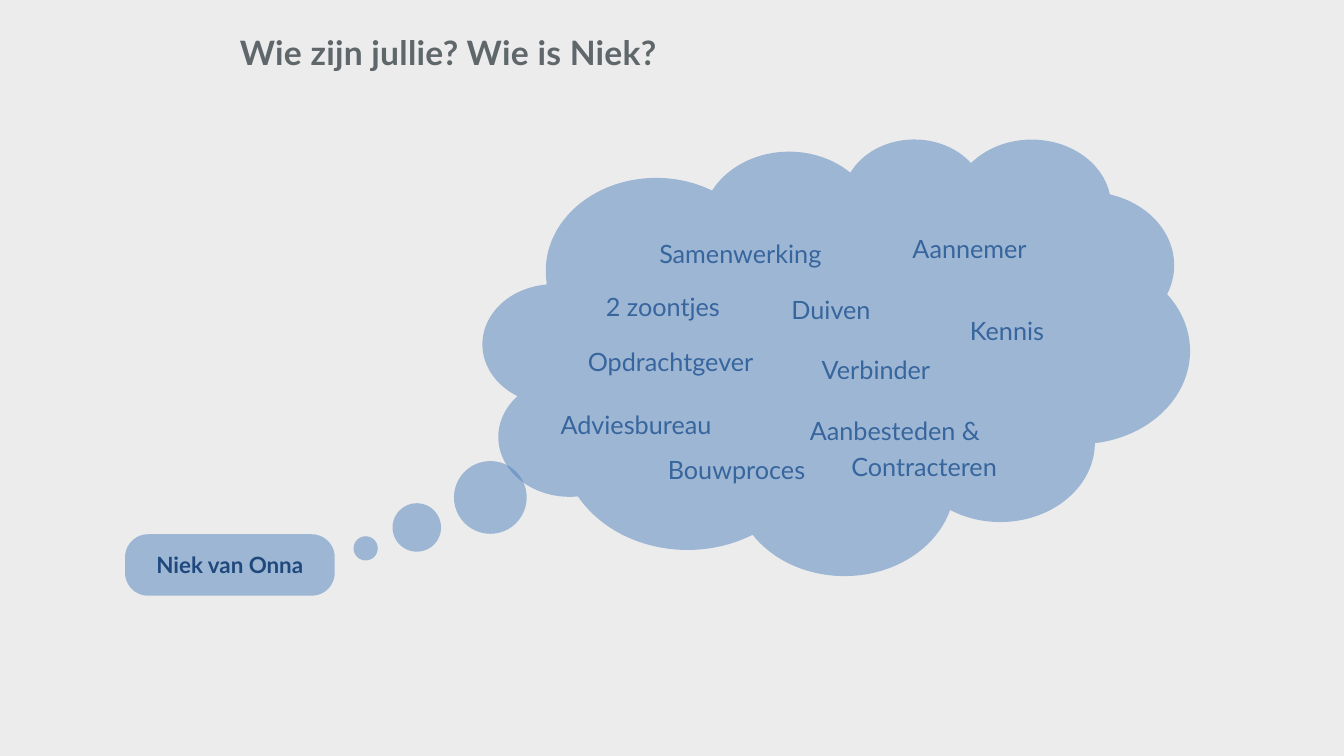
from pptx import Presentation
from pptx.dml.color import RGBColor
from pptx.enum.shapes import MSO_SHAPE
from pptx.enum.text import MSO_ANCHOR, PP_ALIGN
from pptx.oxml.ns import qn
from pptx.util import Inches, Pt
from lxml.etree import SubElement

FONT = "Lato"
BACKGROUND = RGBColor(0xEC, 0xEC, 0xEC)
GREY = RGBColor(0x5F, 0x67, 0x6A)
NAVY = RGBColor(0x1F, 0x49, 0x7D)
BLUE = RGBColor(0x4F, 0x81, 0xBD)
LEFT, CENTER = PP_ALIGN.LEFT, PP_ALIGN.CENTER

# Content: text and its place as left, top, width, height
TITLE = ("Wie zijn jullie? Wie is Niek?", (2.28, 0.27, 9.98, 0.61))
NAME = ("Niek van Onna", (1.24, 5.3, 2.08, 0.61))
CLOUD = (4.79, 1.37, 7.01, 4.33)
CLOUD_TAIL = (-0.666, 0.44)
FIRST_WORD = ("Samenwerking", (6.44, 2.32, 1.99, 0.43))

# Hanging words: text, place, alignment, line spacing
WORDS = [
    ("Duiven", (7.65, 2.85, 1.99, 0.43), LEFT, 0.9),
    ("Kennis", (9.42, 2.97, 1.56, 0.43), LEFT, 1.2),
    ("Opdrachtgever", (5.63, 3.37, 2.14, 0.43), LEFT, 0.9),
    ("Aannemer", (8.85, 2.25, 1.99, 0.43), LEFT, 0.9),
    ("Adviesbureau", (5.36, 3.99, 1.99, 0.43), LEFT, 0.9),
    ("Verbinder", (7.95, 3.45, 1.99, 0.43), LEFT, 0.9),
    ("Aanbesteden & Contracteren", (7.55, 3.96, 2.65, 1.32), CENTER, 1.2),
    ("Bouwproces", (6.31, 4.44, 1.99, 0.43), CENTER, 0.9),
    ("2 zoontjes", (5.58, 2.82, 1.99, 0.43), CENTER, 0.9),
]
HANGING = Inches(0.58)


def write(shape, text, size, color, bold=False, align=LEFT):
    """Put one styled paragraph in a shape and return it."""
    shape.text_frame.word_wrap = True
    para = shape.text_frame.paragraphs[0]
    para.text = text
    para.alignment = align
    font = para.font
    font.name, font.size, font.bold = FONT, Pt(size), bold
    font.color.rgb = color
    return para


def add_text(page, text, place, size, color, bold=False, align=LEFT):
    box = page.shapes.add_textbox(*map(Inches, place))
    return box, write(box, text, size, color, bold, align)


def add_hanging_word(page, text, place, align, spacing):
    box, para = add_text(page, text, place, 18, NAVY, align=align)
    frame = box.text_frame
    frame.margin_left = frame.margin_right = Inches(0.2)
    frame.margin_top = frame.margin_bottom = Inches(0.1)
    para.line_spacing = spacing
    properties = para._p.get_or_add_pPr()
    properties.set("marL", str(HANGING))
    properties.set("indent", str(-HANGING))


def add_bubble(page, kind, place, adjustments):
    """Add a half-transparent blue shape without outline."""
    shape = page.shapes.add_shape(kind, *map(Inches, place))
    shape.shadow.inherit = False
    shape.line.fill.background()
    shape.fill.solid()
    shape.fill.fore_color.rgb = BLUE
    color = shape._element.spPr.find(qn("a:solidFill"))[0]
    SubElement(color, qn("a:alpha")).set("val", "50000")
    for index, value in enumerate(adjustments):
        shape.adjustments[index] = value
    return shape


def main():
    deck = Presentation()
    deck.slide_width, deck.slide_height = Inches(13.33), Inches(7.5)
    page = deck.slides.add_slide(deck.slide_layouts[6])
    page.background.fill.solid()
    page.background.fill.fore_color.rgb = BACKGROUND

    # Title, slightly letter-spaced
    _, para = add_text(page, *TITLE, 24, GREY, bold=True)
    para.runs[0].font._element.set("spc", "20")

    # Name plate
    text, place = NAME
    plate = add_bubble(page, MSO_SHAPE.ROUNDED_RECTANGLE, place, [0.374])
    plate.text_frame.vertical_anchor = MSO_ANCHOR.MIDDLE
    write(plate, text, 16, NAVY, bold=True, align=CENTER)

    # Words, veiled by the thought cloud on top
    add_text(page, *FIRST_WORD, 18, NAVY)
    for word in WORDS:
        add_hanging_word(page, *word)
    add_bubble(page, MSO_SHAPE.CLOUD_CALLOUT, CLOUD, CLOUD_TAIL)

    deck.save("out.pptx")


if __name__ == "__main__":
    main()
